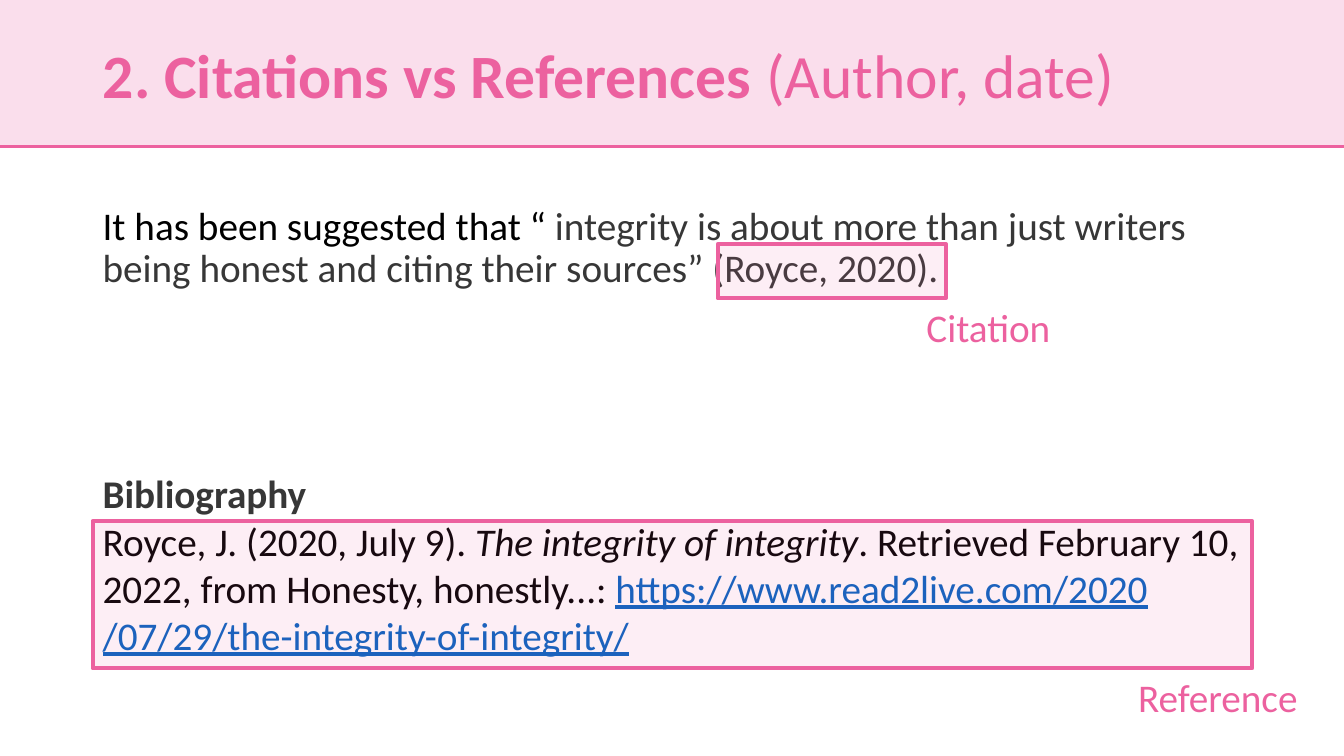
from lxml import etree
from pptx import Presentation
from pptx.dml.color import RGBColor
from pptx.enum.shapes import MSO_CONNECTOR, MSO_SHAPE
from pptx.enum.text import MSO_ANCHOR, MSO_AUTO_SIZE, PP_ALIGN
from pptx.oxml.ns import qn
from pptx.util import Inches, Pt

PINK, PALE_PINK = "EC619F", "FADEEC"
BLACK, GREY, LINK_BLUE = "000000", "373737", "0563C1"


def rgb(value):
    return RGBColor.from_string(value)


def add_run(paragraph, text, size, color, bold=False, italic=False, underline=False):
    run = paragraph.add_run()
    run.text = text
    font = run.font
    font.name, font.size = "Calibri", Pt(size)
    font.color.rgb = rgb(color)
    font.bold, font.italic, font.underline = bold, italic, underline


prs = Presentation()
prs.slide_width, prs.slide_height = Inches(13.33), Inches(7.5)
slide = prs.slides.add_slide(prs.slide_layouts[5])
shapes = slide.shapes

# Header band and rule
band = shapes.add_shape(MSO_SHAPE.RECTANGLE, 0, 0, prs.slide_width, Inches(1.45))
band.shadow.inherit = False
band.fill.solid()
band.fill.fore_color.rgb = rgb(PALE_PINK)
band.line.fill.background()

rule = shapes.add_connector(MSO_CONNECTOR.STRAIGHT, 0, Inches(1.45),
                            prs.slide_width, Inches(1.45))
rule.line.color.rgb = rgb(PINK)
rule.line.width = Pt(2.25)
etree.SubElement(rule._element.spPr, qn("a:effectLst"))

# Title, brought in front of the band
title = shapes.title
title.left, title.top = Inches(0.92), Inches(0.1)
title.width, title.height = Inches(11.5), Inches(1.35)
title.text_frame.vertical_anchor = MSO_ANCHOR.MIDDLE
title.text_frame.auto_size = MSO_AUTO_SIZE.NONE
heading = title.text_frame.paragraphs[0]
heading.alignment = PP_ALIGN.LEFT
heading.line_spacing = 0.9
add_run(heading, "2. Citations vs References ", 44, PINK, bold=True)
add_run(heading, "(Author, date)", 44, PINK)
rule._element.addnext(title._element)

# Quotation and bibliography
body = shapes.add_textbox(Inches(0.92), Inches(2), Inches(11.5), Inches(4.76)).text_frame
body.word_wrap = True
quotation = body.paragraphs[0]
quotation.line_spacing = 0.9
add_run(quotation, "It has been suggested that “", 28, BLACK)
add_run(quotation, " integrity is about more than just writers being honest "
        "and citing their sources” (Royce, 2020).", 28, GREY)

bibliography = body.add_paragraph()
bibliography.line_spacing = 0.9
bibliography.space_before = Pt(131)
add_run(bibliography, "Bibliography", 28, GREY, bold=True)

reference = body.add_paragraph()
add_run(reference, "Royce, J. (2020, July 9). ", 28, BLACK)
add_run(reference, "The integrity of integrity", 28, BLACK, italic=True)
add_run(reference, ". Retrieved February 10, 2022, from Honesty, honestly...: ", 28, BLACK)
add_run(reference, "https://www.read2live.com/2020 /07/29/the-integrity-of-integrity/",
        28, LINK_BLUE, underline=True)

# Highlight frames, each with its label at the lower right
highlights = [
    ("Citation", (7.12, 2.42, 2.26, 0.54), (9.09, 2.96)),
    ("Reference", (0.92, 5.17, 11.5, 1.46), (11.19, 6.63)),
]
for name, frame_box, label_corner in highlights:
    frame = shapes.add_shape(MSO_SHAPE.RECTANGLE, *map(Inches, frame_box))
    frame.shadow.inherit = False
    frame.fill.solid()
    frame.fill.fore_color.rgb = rgb(PINK)
    tint = frame.fill._xPr.find(qn("a:solidFill"))[0]
    etree.SubElement(tint, qn("a:alpha"), val="10000")
    frame.line.color.rgb = rgb(PINK)
    frame.line.width = Pt(3)

    label = shapes.add_textbox(*map(Inches, label_corner), Inches(2.09), Inches(0.57))
    label.text_frame.word_wrap = True
    add_run(label.text_frame.paragraphs[0], name, 28, PINK)

prs.save("out.pptx")
